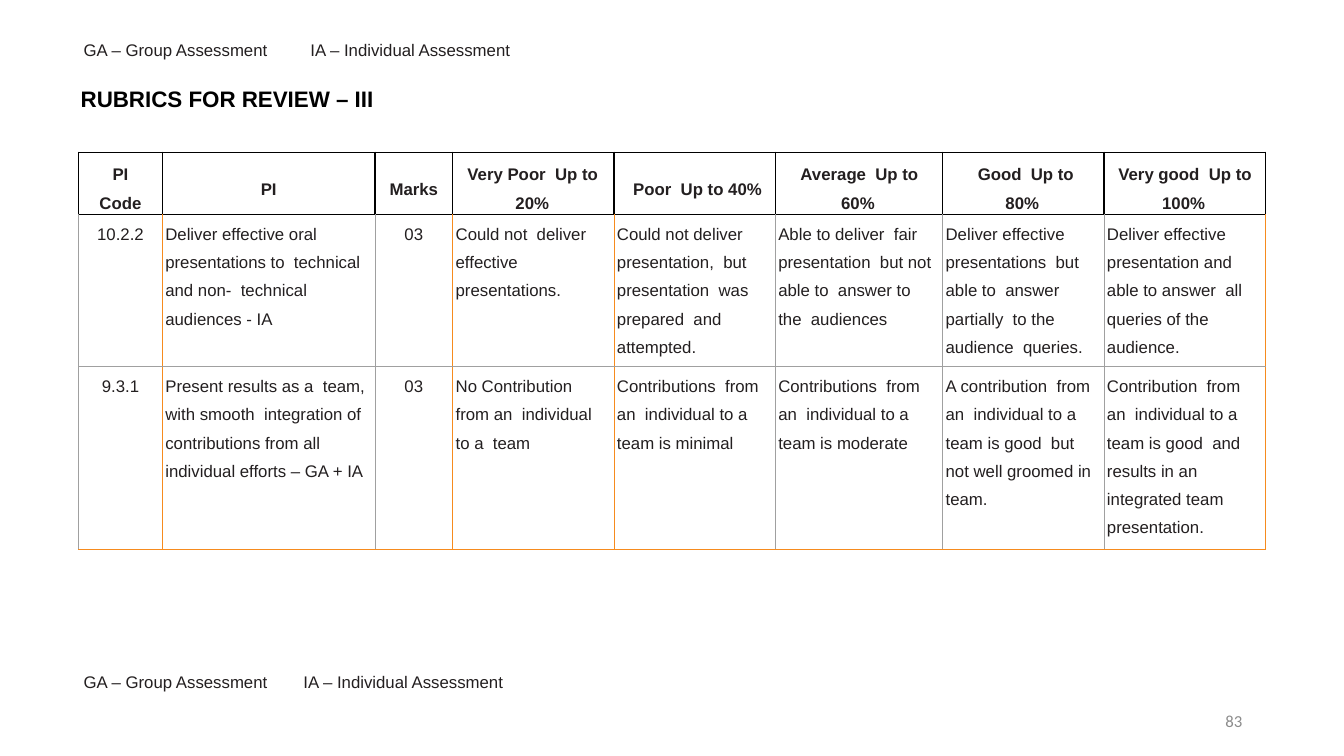
from dataclasses import dataclass

from lxml.etree import SubElement
from pptx import Presentation
from pptx.dml.color import RGBColor
from pptx.enum.text import MSO_ANCHOR, PP_ALIGN
from pptx.oxml.ns import qn
from pptx.slide import Slide
from pptx.table import _Cell
from pptx.text.text import TextFrame
from pptx.util import Emu, Pt

EMU_PER_PX = 9144  # 100 px to the inch


@dataclass(frozen=True)
class Theme:
    font: str = "Arial"
    number_font: str = "Calibri"
    ink: str = "231F20"
    black: str = "000000"
    muted: str = "8C8C8C"
    orange: str = "F68B1E"
    grey: str = "A0A0A0"
    title_size: float = 16
    body_size: float = 12
    header_rule: float = 1
    body_rule: float = 0.75


@dataclass(frozen=True)
class Label:
    text: str
    left: int
    top: int
    width: int


@dataclass(frozen=True)
class Heading:
    text: str
    width: int
    indent: int = 0
    first_line: int = 0


THEME = Theme()
GROUP = "GA – Group Assessment"
INDIVIDUAL = "IA – Individual Assessment"
LABELS = [
    Label(GROUP, 81, 37, 257), Label(INDIVIDUAL, 306, 37, 280),
    Label(GROUP, 81, 664, 257), Label(INDIVIDUAL, 299, 664, 280),
]
HEADINGS = [
    Heading("PI\nCode", 83),
    Heading("PI", 211),
    Heading("Marks", 77),
    Heading("Very Poor  Up to 20%", 160, 10, 1),
    Heading("Poor  Up to 40%", 160, 10, 8),
    Heading("Average  Up to 60%", 166, 11, 3),
    Heading("Good  Up to 80%", 160, 10, 7),
    Heading("Very good  Up to 100%", 160, 8, 3),
]
ROW_HEIGHTS = [58, 148, 178]
CENTRED_COLUMNS = {0, 2}
CRITERIA = [
    ["10.2.2",
     "Deliver effective oral  presentations to  technical and non-  technical audiences - IA",
     "03",
     "Could not  deliver effective  presentations.",
     "Could not deliver  presentation,  but presentation  was prepared  and attempted.",
     "Able to deliver  fair presentation  but not able to  answer to the  audiences",
     "Deliver effective  presentations  but able to  answer partially  to the audience  queries.",
     "Deliver effective  presentation and  able to answer  all queries of the  audience."],
    ["9.3.1",
     "Present results as a  team, with smooth  integration of  contributions from all  "
     "individual efforts – GA + IA",
     "03",
     "No Contribution  from an  individual to a  team",
     "Contributions  from an  individual to a  team is minimal",
     "Contributions  from an  individual to a  team is moderate",
     "A contribution  from an  individual to a  team is good  but not well groomed in  team.",
     "Contribution  from an  individual to a  team is good  and results in an  "
     "integrated team  presentation."],
]
# Colours of the body's vertical rules and of all horizontal rules, in order
VERTICAL_RULES = [THEME.grey, THEME.orange, THEME.grey, THEME.orange, THEME.orange,
                  THEME.grey, THEME.grey, THEME.grey, THEME.orange]
HORIZONTAL_RULES = [THEME.black, THEME.black, THEME.grey, THEME.orange]


def px(length: int) -> Emu:
    return Emu(length * EMU_PER_PX)


def write(frame: TextFrame, text: str, *, size: float = THEME.body_size,
          font: str = THEME.font, color: str = THEME.ink, bold: bool = False,
          align: PP_ALIGN = PP_ALIGN.LEFT, spacing: float = 1.0,
          indent: int = 0, first_line: int = 0, right: int = 0) -> None:
    """Fill a frame, one paragraph for each line of text."""
    for number, line in enumerate(text.split("\n")):
        para = frame.add_paragraph() if number else frame.paragraphs[0]
        para.alignment = align
        para.line_spacing = spacing
        properties = para._p.get_or_add_pPr()
        for name, length in (("marL", indent), ("marR", right), ("indent", first_line)):
            properties.set(name, str(px(length)))
        span = para.add_run()
        span.text = line
        span.font.name = font
        span.font.size = Pt(size)
        span.font.bold = bold
        span.font.color.rgb = RGBColor.from_string(color)


def add_box(page: Slide, left: int, top: int, width: int, height: int,
            *, inset_top: int = 0) -> TextFrame:
    box = page.shapes.add_textbox(px(left), px(top), px(width), px(height))
    frame = box.text_frame
    frame.word_wrap = True
    frame.margin_left = frame.margin_right = frame.margin_bottom = 0
    frame.margin_top = px(inset_top)
    return frame


def rule_cell(cell: _Cell, row: int, column: int) -> None:
    """Draw the four borders of a cell."""
    header = row == 0
    sides = {
        "a:lnL": THEME.black if header else VERTICAL_RULES[column],
        "a:lnR": THEME.black if header else VERTICAL_RULES[column + 1],
        "a:lnT": HORIZONTAL_RULES[row],
        "a:lnB": HORIZONTAL_RULES[row + 1],
    }
    properties = cell._tc.get_or_add_tcPr()
    for place, (tag, color) in enumerate(sides.items()):
        weight = THEME.header_rule if color == THEME.black else THEME.body_rule
        line = SubElement(properties, qn(tag), w=str(Pt(weight)))
        fill = SubElement(line, qn("a:solidFill"))
        SubElement(fill, qn("a:srgbClr"), val=color)
        properties.insert(place, line)


def add_rubric(page: Slide) -> None:
    width = sum(heading.width for heading in HEADINGS)
    table = page.shapes.add_table(len(ROW_HEIGHTS), len(HEADINGS), px(78), px(151),
                                  px(width), px(sum(ROW_HEIGHTS))).table
    table.first_row = table.horz_banding = False
    for row, height in enumerate(ROW_HEIGHTS):
        table.rows[row].height = px(height)
    for column, heading in enumerate(HEADINGS):
        table.columns[column].width = px(heading.width)
        for row in range(len(ROW_HEIGHTS)):
            cell = table.cell(row, column)
            cell.margin_left = cell.margin_right = cell.margin_bottom = 0
            cell.margin_top = px(1 if row else 2)
            cell.fill.background()
            rule_cell(cell, row, column)
            if row == 0:
                cell.vertical_anchor = MSO_ANCHOR.MIDDLE
                write(cell.text_frame, heading.text, bold=True, align=PP_ALIGN.CENTER,
                      spacing=1.5, indent=heading.indent, first_line=heading.first_line,
                      right=heading.indent + 2 if heading.indent else 0)
            elif column in CENTRED_COLUMNS:
                write(cell.text_frame, CRITERIA[row - 1][column],
                      align=PP_ALIGN.CENTER, spacing=1.5)
            else:
                write(cell.text_frame, CRITERIA[row - 1][column],
                      spacing=1.5, indent=3, right=5)


def main() -> None:
    deck = Presentation()
    deck.slide_width, deck.slide_height = px(1333), px(750)
    page = deck.slides.add_slide(deck.slide_layouts[6])

    title = add_box(page, 78, 49, 569, 74, inset_top=45)
    write(title, "RUBRICS FOR REVIEW – III", size=THEME.title_size,
          color=THEME.black, bold=True, indent=2)
    add_rubric(page)
    for label in LABELS:
        frame = add_box(page, label.left, label.top, label.width, 15, inset_top=2)
        write(frame, label.text, indent=2)

    number = add_box(page, 942, 695, 300, 40)
    number.margin_right = px(10)
    number.vertical_anchor = MSO_ANCHOR.MIDDLE
    write(number, "83", font=THEME.number_font, color=THEME.muted, align=PP_ALIGN.RIGHT)

    deck.save("out.pptx")


if __name__ == "__main__":
    main()
